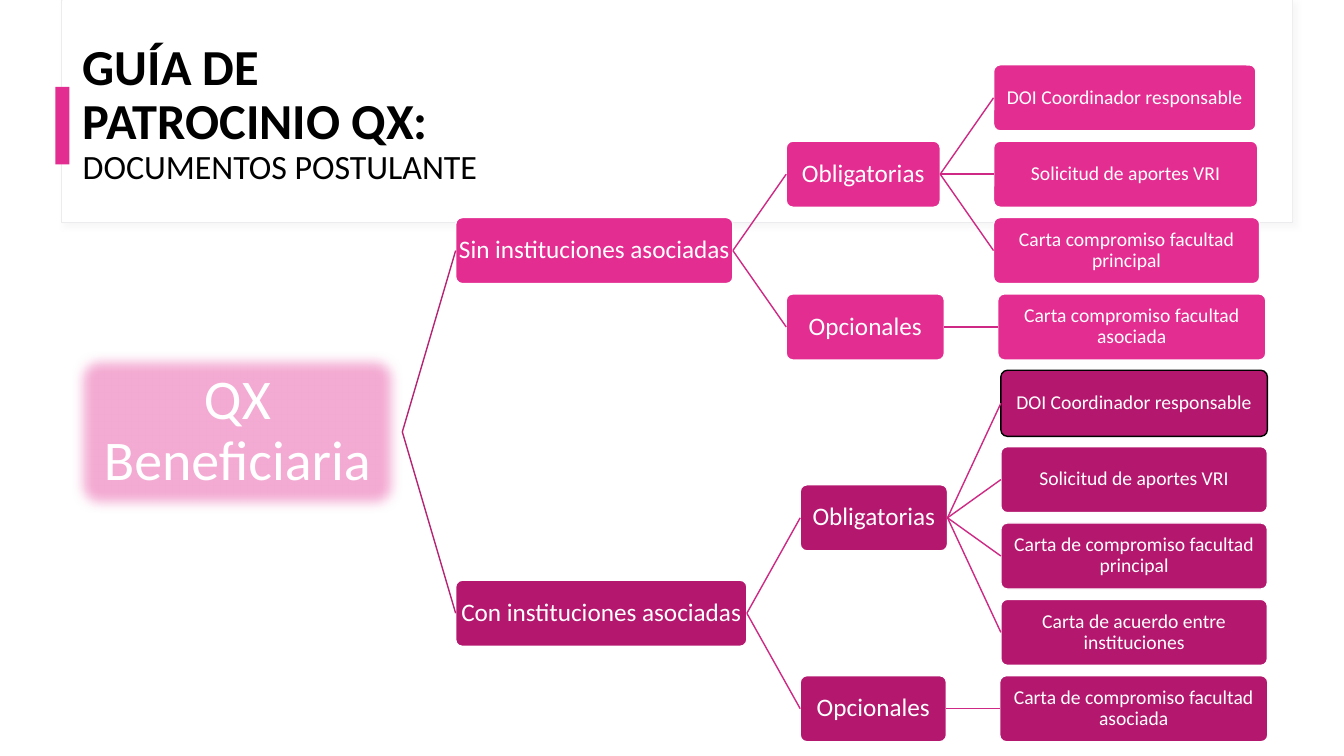
from dataclasses import dataclass

import pptx
import pptx.dml.color
import pptx.enum.shapes
import pptx.enum.text
import pptx.oxml
import pptx.oxml.ns
import pptx.util

Pt = pptx.util.Pt
SHAPES = pptx.enum.shapes.MSO_SHAPE
ALIGN = pptx.enum.text.PP_ALIGN
MIDDLE = pptx.enum.text.MSO_ANCHOR.MIDDLE

COLORS = {
    "white": "FFFFFF", "black": "000000", "frame": "ECECEE",
    "pink": "E32D91", "magenta": "B4186E", "pale": "F4ABD3",
    "trunk": "B62474", "branch": "CE2984",
}
FONT = "Calibri"

# Tree geometry: leaves sit on equal rows, parents centre on their children
FIRST_ROW, ROW_PITCH = 69.9, 54.54
LEVEL_GAP = 38.1
NODE_HEIGHT = 47.2

EFFECTS = {
    "none": "",
    "soft": '<a:softEdge rad="112500"/>',
    "shadow": '<a:outerShdw blurRad="50800" dist="38100" dir="2700000" algn="tl" rotWithShape="0">'
              '<a:srgbClr val="D9D9D9"><a:alpha val="20000"/></a:srgbClr></a:outerShdw>',
}


@dataclass
class Node:
    text: str
    width: float
    children: tuple["Node", ...] = ()
    fill: str = "pink"
    line: str = "white"
    size: float = 14
    height: float = NODE_HEIGHT
    inset: float = 0.8
    effect: str = "none"
    link: str = "branch"


@dataclass
class Panel:
    left: float
    top: float
    width: float
    height: float
    fill: str
    line: str | None = None
    effect: str = "none"


def rgb(name: str) -> pptx.dml.color.RGBColor:
    return pptx.dml.color.RGBColor.from_string(COLORS[name])


def set_all(target, values: dict) -> None:
    for key, value in values.items():
        setattr(target, key, value)


def set_effect(shape, effect: str) -> None:
    properties = shape._element.spPr
    for old in properties.findall(pptx.oxml.ns.qn("a:effectLst")):
        properties.remove(old)
    properties.append(pptx.oxml.parse_xml(
        f'<a:effectLst {pptx.oxml.ns.nsdecls("a")}>{EFFECTS[effect]}</a:effectLst>'))


def add_box(slide, kind, box: tuple, fill: str, line: str | None, line_width: float, effect: str):
    shape = slide.shapes.add_shape(kind, *map(Pt, box))
    shape.shadow.inherit = False
    shape.fill.solid()
    shape.fill.fore_color.rgb = rgb(fill)
    if line:
        shape.line.color.rgb = rgb(line)
        shape.line.width = Pt(line_width)
    else:
        shape.line.fill.background()
    set_effect(shape, effect)
    return shape


def add_run(paragraph, text: str, size: float, color: str, bold: bool = False) -> None:
    run = paragraph.add_run()
    run.text = text
    set_all(run.font, {"name": FONT, "size": Pt(size), "bold": bold})
    run.font.color.rgb = rgb(color)


def add_link(slide, parent, child, color: str) -> None:
    link = slide.shapes.add_connector(pptx.enum.shapes.MSO_CONNECTOR.STRAIGHT, 0, 0, 0, 0)
    link.begin_connect(parent, 3)
    link.end_connect(child, 1)
    link.line.color.rgb = rgb(color)
    link.line.width = Pt(1)
    set_effect(link, "none")


def draw_tree(slide, node: Node, left: float, row: int = 0):
    """Draw a node and its descendants; return its box, middle and next free row."""
    child_left = left + node.width + LEVEL_GAP
    child_boxes, middles = [], []
    for child in node.children:
        child_box, child_middle, row = draw_tree(slide, child, child_left, row)
        child_boxes.append(child_box)
        middles.append(child_middle)
    if middles:
        middle = sum(middles) / len(middles)
    else:
        middle = FIRST_ROW + row * ROW_PITCH
        row += 1

    bounds = (left, middle - node.height / 2, node.width, node.height)
    box = add_box(slide, SHAPES.ROUNDED_RECTANGLE, bounds, node.fill, node.line, 1, node.effect)
    box.adjustments[0] = 0.1
    inset = Pt(node.inset)
    set_all(box.text_frame, {
        "word_wrap": True, "vertical_anchor": MIDDLE, "margin_left": inset,
        "margin_right": inset, "margin_top": inset, "margin_bottom": inset})
    paragraph = box.text_frame.paragraphs[0]
    set_all(paragraph, {"alignment": ALIGN.CENTER, "line_spacing": 0.9})
    add_run(paragraph, node.text, node.size, "white")

    for child_box in child_boxes:
        add_link(slide, box, child_box, node.link)
    return box, middle, row


PANELS = (
    Panel(44, 0, 879, 159, "white", "frame", "shadow"),
    Panel(44.6, 0, 878.4, 158.4, "white"),
    Panel(39.6, 62, 10, 55.4, "pink"),
)

WITHOUT_PARTNERS = Node("Sin instituciones asociadas", 198, size=18, children=(
    Node("Obligatorias", 110, size=18, children=(
        Node("DOI Coordinador responsable", 187.4),
        Node("Solicitud de aportes VRI", 188.7),
        Node("Carta compromiso facultad principal", 190.1))),
    Node("Opcionales", 113, size=18, children=(
        Node("Carta compromiso facultad asociada", 191.5),)),
))

WITH_PARTNERS = Node("Con instituciones asociadas", 208, fill="magenta", size=18, children=(
    Node("Obligatorias", 105.2, fill="magenta", size=18, children=(
        Node("DOI Coordinador responsable", 190.4, fill="magenta", line="black"),
        Node("Solicitud de aportes VRI", 190.4, fill="magenta"),
        Node("Carta de compromiso facultad principal", 190.4, fill="magenta"),
        Node("Carta de acuerdo entre instituciones", 190.4, fill="magenta"))),
    Node("Opcionales", 104.4, fill="magenta", size=18, children=(
        Node("Carta de compromiso facultad asociada", 191.5, fill="magenta"),)),
))

BENEFICIARY = Node("QX Beneficiaria", 235.6, (WITHOUT_PARTNERS, WITH_PARTNERS), fill="pale",
                   size=40, height=115.2, inset=2.2, effect="soft", link="trunk")


def main() -> None:
    deck = pptx.Presentation()
    set_all(deck, {"slide_width": Pt(960), "slide_height": Pt(540)})
    slide = deck.slides.add_slide(deck.slide_layouts[6])

    # Header frame and accent bar
    for panel in PANELS:
        bounds = (panel.left, panel.top, panel.width, panel.height)
        add_box(slide, SHAPES.RECTANGLE, bounds, panel.fill, panel.line, 0.75, panel.effect)

    # Title
    title = slide.shapes.add_textbox(Pt(52), Pt(18.3), Pt(318.2), Pt(126.7)).text_frame
    set_all(title, {"word_wrap": True, "vertical_anchor": MIDDLE})
    heading = title.paragraphs[0]
    heading.line_spacing = 0.9
    add_run(heading, "GUÍA DE PATROCINIO QX: ", 36, "black", bold=True)
    add_run(heading, "DOCUMENTOS POSTULANTE", 24.3, "black")

    # Document tree
    draw_tree(slide, BENEFICIARY, 51.8)

    deck.save("out.pptx")


if __name__ == "__main__":
    main()
